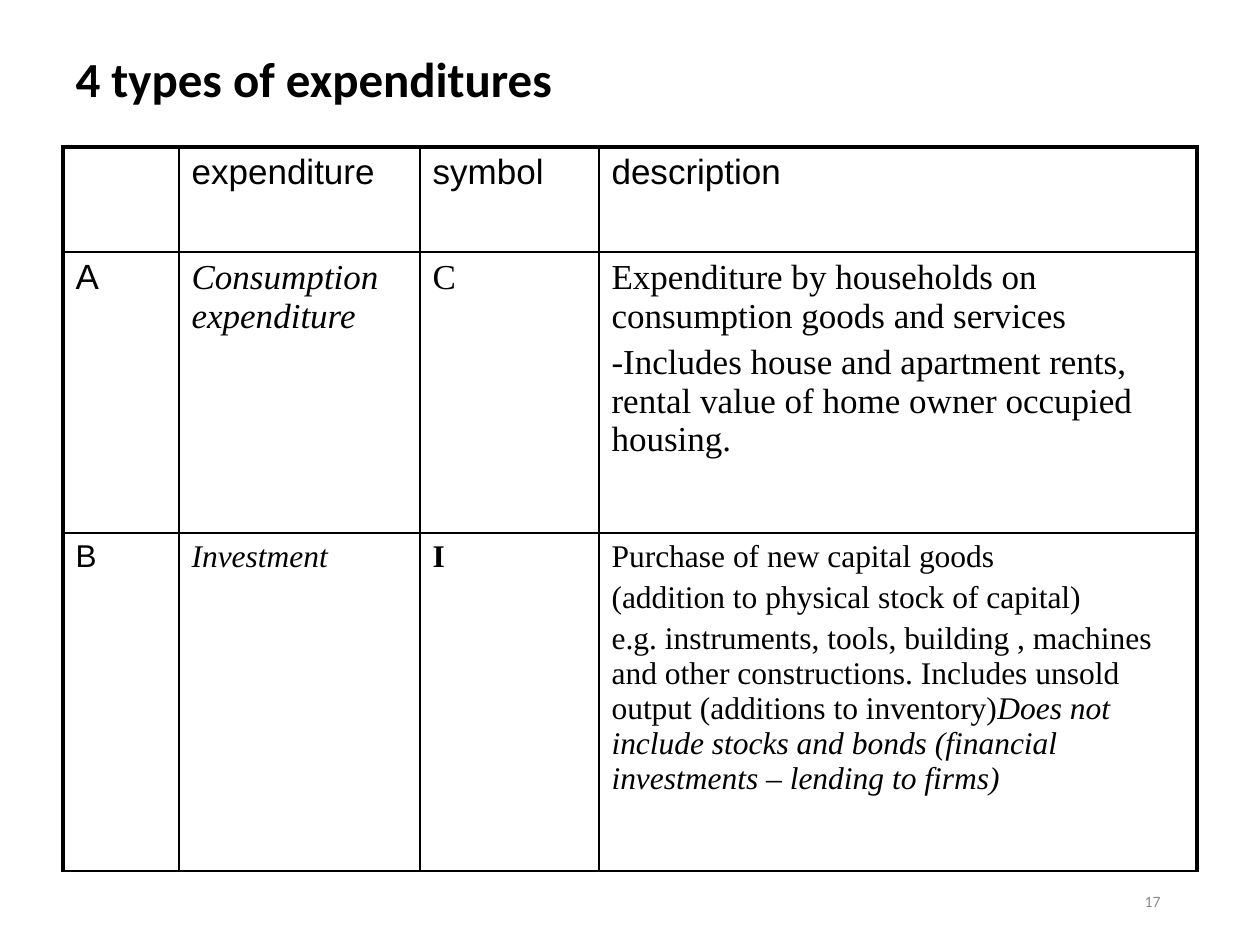
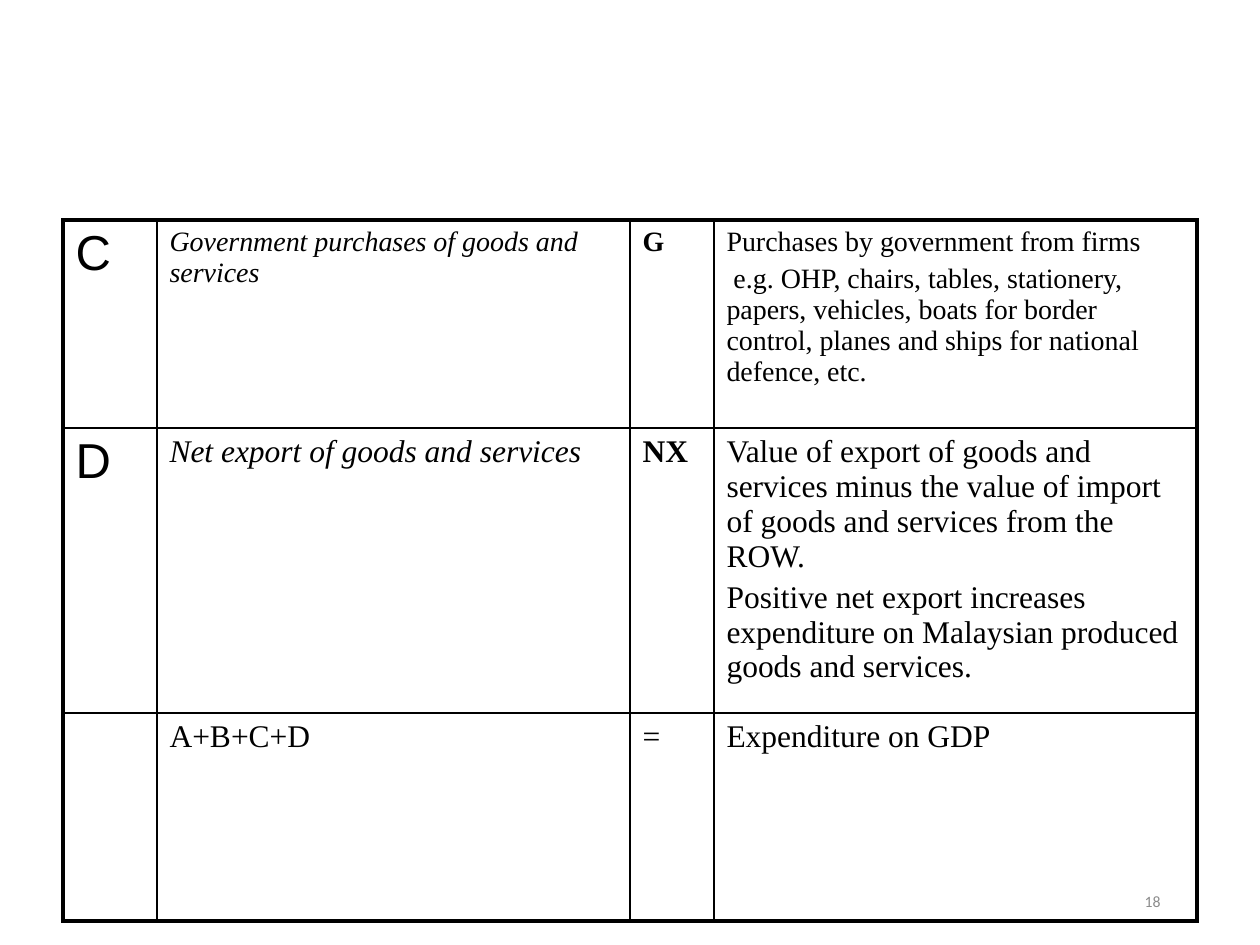
from pptx import Presentation
from pptx.dml.color import RGBColor
from pptx.enum.text import MSO_ANCHOR, PP_ALIGN
from pptx.oxml.ns import qn
from pptx.util import Emu, Pt
from lxml import etree

MIDDLE = MSO_ANCHOR.MIDDLE
LEFT, RIGHT = PP_ALIGN.LEFT, PP_ALIGN.RIGHT

BLACK = RGBColor(0x00, 0x00, 0x00)
GREY = RGBColor(0x8C, 0x8C, 0x8C)
SANS, SERIF, HEADING = "Arial", "Times New Roman", "Calibri"
THICK, THIN, NO_LINE = 2.25, 1, 0
TITLE_ONLY, BLANK = 5, 6
PX_PER_INCH = 126

TITLE_BOX = (63, 38, 1134, 88)
NUMBER_BOX = (890, 876, 283, 50)
TABLE_LEFT = 63


def cell_text(size, font, *paragraphs, style=""):
    paras = [[(para, style)] if isinstance(para, str) else para for para in paragraphs]
    return size, font, paras


EMPTY = cell_text(18, SANS)

SLIDES = [
    {
        "title": "4 types of expenditures",
        "number": "17",
        "top": 147,
        "columns": (116, 241, 179, 25, 573),
        "rows": (105, 281, 338, 106, 115, 116),
        "merges": [(row, 3, row, 4) for row in range(3)]
        + [(row, 2, row, 3) for row in range(3, 6)]
        + [(4, 4, 5, 4)],
        "bottom_line": THIN,
        "cells": [
            [
                EMPTY,
                cell_text(20, SANS, "expenditure"),
                cell_text(20, SANS, "symbol"),
                cell_text(20, SANS, "description"),
            ],
            [
                cell_text(20, SANS, "A"),
                cell_text(20, SERIF, "Consumption expenditure", style="i"),
                cell_text(20, SERIF, "C"),
                cell_text(
                    20, SERIF,
                    "Expenditure by households on consumption goods and services",
                    "-Includes house and apartment rents, rental value of home owner occupied housing.",
                ),
            ],
            [
                cell_text(18, SANS, "B"),
                cell_text(18, SERIF, "Investment", style="i"),
                cell_text(18, SERIF, "I", style="b"),
                cell_text(
                    18, SERIF,
                    "Purchase of new capital goods",
                    "(addition to physical stock of capital)",
                    [
                        ("e.g. instruments, tools, building , machines and other constructions. "
                         "Includes unsold output (additions to inventory)", ""),
                        ("Does not include stocks and bonds "
                         "(financial investments – lending to firms)", "i"),
                    ],
                ),
            ],
        ],
    },
    {
        "title": None,
        "number": "18",
        "top": 220,
        "columns": (94, 473, 84, 483),
        "rows": (208, 285, 208),
        "merges": [],
        "bottom_line": THICK,
        "cells": [
            [
                cell_text(28, SANS, "C"),
                cell_text(16, SERIF, "Government purchases of goods and services", style="i"),
                cell_text(16, SERIF, "G", style="b"),
                cell_text(
                    16, SERIF,
                    "Purchases by government from firms",
                    " e.g. OHP, chairs, tables, stationery, papers, vehicles, boats for border "
                    "control, planes and ships for national defence, etc.",
                ),
            ],
            [
                cell_text(28, SANS, "D"),
                cell_text(18, SERIF, "Net export of goods and services", style="i"),
                cell_text(18, SERIF, "NX", style="b"),
                cell_text(
                    18, SERIF,
                    "Value of export of goods and services minus the value of import of goods "
                    "and services from the ROW.",
                    "Positive net export increases expenditure on Malaysian produced goods and services.",
                ),
            ],
            [
                EMPTY,
                cell_text(18, SERIF, "A+B+C+D"),
                cell_text(18, SERIF, "="),
                cell_text(18, SERIF, "Expenditure on GDP"),
            ],
        ],
    },
]


def px(length):
    return Emu(round(length * 914400 / PX_PER_INCH))


def add_span(para, text, size, font, color=BLACK, style=""):
    span = para.add_run()
    span.text = text
    span.font.size = Pt(size)
    span.font.name = font
    span.font.color.rgb = color
    span.font.bold = "b" in style
    span.font.italic = "i" in style


def add_title(page, text):
    title = page.shapes.title
    title.left, title.top, title.width, title.height = map(px, TITLE_BOX)
    title.text_frame.vertical_anchor = MIDDLE
    para = title.text_frame.paragraphs[0]
    para.alignment = LEFT
    para.line_spacing = 0.9
    add_span(para, text, 28, HEADING, style="b")


def add_number(page, number):
    box = page.shapes.add_textbox(*map(px, NUMBER_BOX))
    box.text_frame.word_wrap = True
    box.text_frame.vertical_anchor = MIDDLE
    para = box.text_frame.paragraphs[0]
    para.alignment = RIGHT
    add_span(para, number, 9, HEADING, GREY)


def set_borders(cell, widths):
    properties = cell._tc.get_or_add_tcPr()
    for side, width in widths.items():
        line = etree.SubElement(properties, qn(f"a:ln{side}"), w=str(Pt(width)))
        if width == NO_LINE:
            etree.SubElement(line, qn("a:noFill"))
        else:
            fill = etree.SubElement(line, qn("a:solidFill"))
            etree.SubElement(fill, qn("a:srgbClr"), val=str(BLACK))


def border_widths(r, first, last, content):
    filled_rows, column_count = len(content["cells"]), len(content["columns"])
    if r >= filled_rows:
        top = content["bottom_line"] if r == filled_rows else NO_LINE
        return {"L": NO_LINE, "R": NO_LINE, "T": top, "B": NO_LINE}
    return {
        "L": THICK if first == 0 else THIN,
        "R": THICK if last == column_count - 1 else THIN,
        "T": THICK if r == 0 else THIN,
        "B": content["bottom_line"] if r == filled_rows - 1 else THIN,
    }


def fill_cell(cell, cell_content):
    size, font, paragraphs = cell_content
    frame = cell.text_frame
    for index, spans in enumerate(paragraphs):
        para = frame.add_paragraph() if index else frame.paragraphs[0]
        para.space_before = Pt(size * 0.2)
        for text, style in spans:
            add_span(para, text, size, font, style=style)


def add_expenditure_table(page, content):
    columns, rows = content["columns"], content["rows"]
    frame = page.shapes.add_table(
        len(rows), len(columns), px(TABLE_LEFT), px(content["top"]),
        px(sum(columns)), px(sum(rows)),
    )
    table = frame.table
    table.first_row = table.horz_banding = False
    for column, width in zip(table.columns, columns):
        column.width = px(width)
    for row, height in zip(table.rows, rows):
        row.height = px(height)
    for top, left, bottom, right in content["merges"]:
        table.cell(top, left).merge(table.cell(bottom, right))
    for r in range(len(rows)):
        row_cells = iter(content["cells"][r] if r < len(content["cells"]) else [])
        for c in range(len(columns)):
            cell = table.cell(r, c)
            if not cell.is_spanned:
                last = c + cell.span_width - 1 if cell.is_merge_origin else c
                set_borders(cell, border_widths(r, c, last, content))
                fill_cell(cell, next(row_cells, EMPTY))
            cell.fill.background()


def main():
    deck = Presentation()
    deck.slide_width, deck.slide_height = px(1260), px(945)
    for content in SLIDES:
        layout = TITLE_ONLY if content["title"] else BLANK
        page = deck.slides.add_slide(deck.slide_layouts[layout])
        if content["title"]:
            add_title(page, content["title"])
        add_expenditure_table(page, content)
        add_number(page, content["number"])
    deck.save("out.pptx")


if __name__ == "__main__":
    main()
